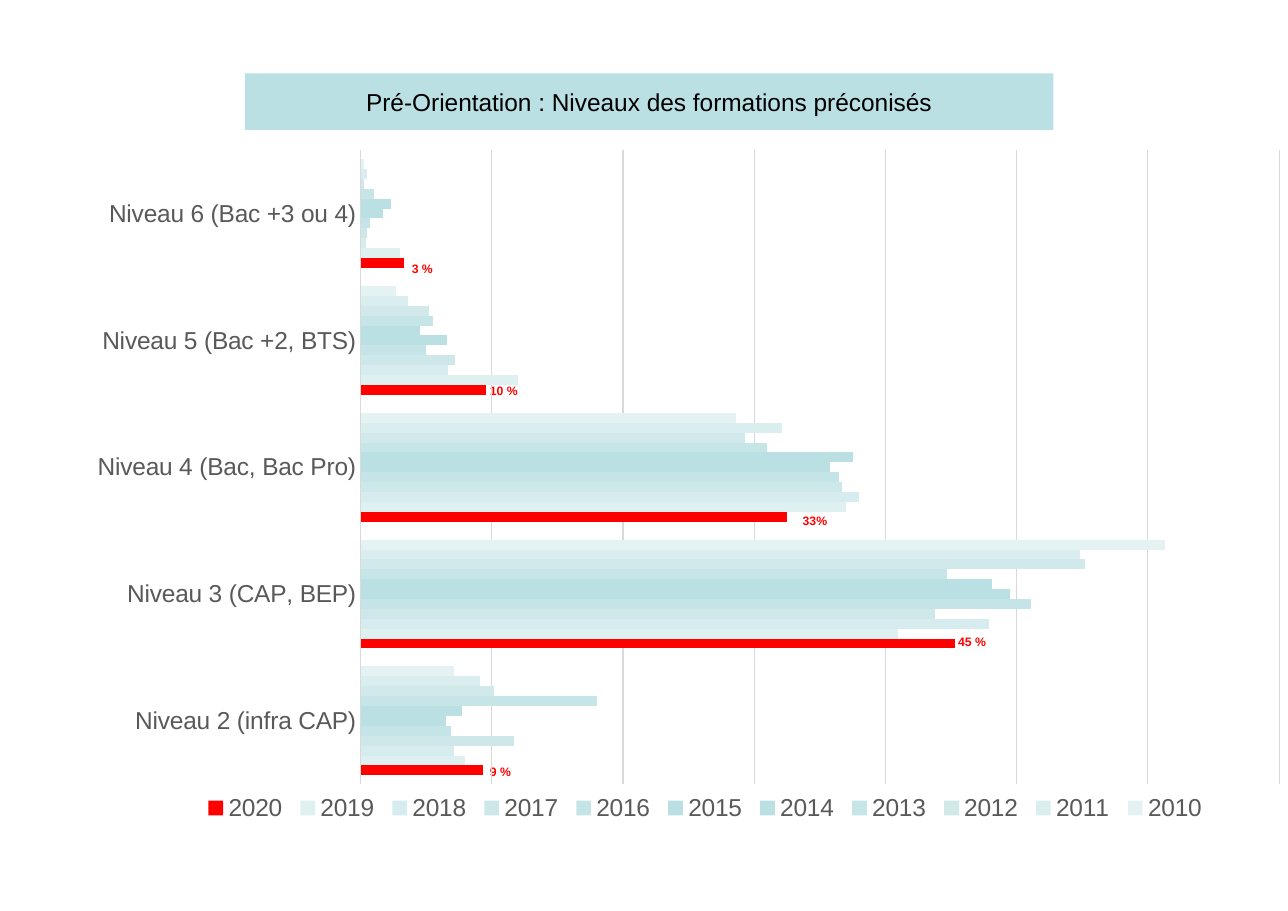
from lxml import etree
from pptx import Presentation
from pptx.chart import data as cd
from pptx.dml.color import RGBColor
from pptx.enum import chart as ch, shapes, text as tx
from pptx.util import Pt

BLACK = RGBColor(0, 0, 0)
RED = RGBColor(255, 0, 0)
GREY = RGBColor(0x59, 0x59, 0x59)
RULE = RGBColor(0xD9, 0xD9, 0xD9)
TEAL = RGBColor(0xBB, 0xE0, 0xE3)
FONT = "Arial"

TITLE = "Pré-Orientation : Niveaux des formations préconisés"
LEVELS = ["Niveau 6 (Bac +3 ou 4)", "Niveau 5 (Bac +2, BTS)", "Niveau 4 (Bac, Bac Pro)",
          "Niveau 3 (CAP, BEP)", "Niveau 2 (infra CAP)"]
YEARS = [
    ("2010", "E4F2F3", (0.003, 0.027, 0.286, 0.613, 0.071)),
    ("2011", "DBEEEF", (0.005, 0.036, 0.321, 0.548, 0.091)),
    ("2012", "D1E9EB", (0.003, 0.052, 0.293, 0.552, 0.102)),
    ("2013", "C6E5E7", (0.010, 0.055, 0.310, 0.447, 0.180)),
    ("2014", "BBE0E3", (0.023, 0.045, 0.375, 0.481, 0.077)),
    ("2015", "BBE0E3", (0.017, 0.066, 0.358, 0.495, 0.065)),
    ("2016", "C4E4E7", (0.007, 0.050, 0.365, 0.511, 0.069)),
    ("2017", "CEE8EA", (0.005, 0.072, 0.367, 0.438, 0.117)),
    ("2018", "D7ECEE", (0.004, 0.067, 0.380, 0.479, 0.071)),
    ("2019", "DFF0F1", (0.030, 0.120, 0.370, 0.410, 0.080)),
    ("2020", "FF0000", (0.033, 0.096, 0.325, 0.453, 0.093)),
]
NOTES = [
    ("3 %", 262, 167, 29),
    ("10 %", 313, 247, 33),
    ("33%", 517.5, 332, 31),
    ("45 %", 619, 411, 33),
    ("9 %", 313, 496, 29),
]


def style(font, size, color, bold=False):
    font.name, font.size, font.bold = FONT, Pt(size), bold
    font.color.rgb = color


def write(shape, words, size=8, color=RED, bold=True, align=tx.PP_ALIGN.LEFT,
          anchor=tx.MSO_ANCHOR.TOP, fit=tx.MSO_AUTO_SIZE.SHAPE_TO_FIT_TEXT):
    frame = shape.text_frame
    frame.word_wrap, frame.auto_size = False, fit
    frame.vertical_anchor = anchor
    line = frame.paragraphs[0]
    line.alignment = align
    run = line.add_run()
    run.text = words
    style(run.font, size, color, bold)


def place(node, index, inner=False, **box):
    for old in node.findall("{*}layout"):
        node.remove(old)
    space = etree.QName(node).namespace

    def add(host, tag, val=None):
        part = etree.SubElement(host, f"{{{space}}}{tag}")
        if val is not None:
            part.set("val", str(val))
        return part

    outer = etree.Element(f"{{{space}}}layout")
    layout = add(outer, "manualLayout")
    if inner:
        add(layout, "layoutTarget", "inner")
    add(layout, "xMode", "edge")
    add(layout, "yMode", "edge")
    for key, val in box.items():
        add(layout, key, val)
    node.insert(index, outer)


def draw_chart(slide):
    data = cd.CategoryChartData(number_format="0%")
    data.categories = LEVELS
    for year, tint, vals in YEARS:
        data.add_series(year, vals)
    chart = slide.shapes.add_chart(ch.XL_CHART_TYPE.BAR_CLUSTERED, Pt(13.7), Pt(95),
                                   Pt(828), Pt(453.6), data).chart
    chart.has_title = False
    style(chart.font, 16, BLACK)

    plot = chart.plots[0]
    plot.gap_width, plot.overlap, plot.vary_by_categories = 182, 0, False
    for bar, (year, tint, vals) in zip(plot.series, YEARS):
        bar.invert_if_negative = False
        bar.format.fill.solid()
        bar.format.fill.fore_color.rgb = RGBColor.from_string(tint)

    cats = chart.category_axis
    cats.reverse_order = True
    cats.major_tick_mark = cats.minor_tick_mark = ch.XL_TICK_MARK.NONE
    style(cats.tick_labels.font, 16, GREY)
    vals = chart.value_axis
    vals.minimum_scale, vals.maximum_scale, vals.major_unit = 0, 0.7, 0.1
    vals.has_major_gridlines = True
    vals.visible = False
    for line in (cats.format.line, vals.major_gridlines.format.line):
        line.color.rgb = RULE
        line.width = Pt(0.75)

    chart.has_legend = True
    legend = chart.legend
    legend.position = ch.XL_LEGEND_POSITION.BOTTOM
    legend.include_in_layout = False
    style(legend.font, 16, GREY)
    area = chart._chartSpace.find("{*}chart/{*}plotArea")
    place(area, 0, inner=True, x=0.268, y=0.007, w=0.725, h=0.914)
    place(legend._element, 1, x=0.14, y=0.93, w=0.8, h=0.05)


def main():
    deck = Presentation()
    deck.slide_width, deck.slide_height = Pt(841.68), Pt(595.44)
    slide = deck.slides.add_slide(deck.slide_layouts[6])

    band = slide.shapes.add_shape(shapes.MSO_SHAPE.RECTANGLE, Pt(160), Pt(48),
                                  Pt(528.5), Pt(37))
    band.shadow.inherit = False
    band.fill.solid()
    band.fill.fore_color.rgb = TEAL
    band.line.fill.background()
    write(band, TITLE, size=16, color=BLACK, bold=False, align=tx.PP_ALIGN.CENTER,
          anchor=tx.MSO_ANCHOR.MIDDLE, fit=tx.MSO_AUTO_SIZE.NONE)

    for words, left, top, width in NOTES:
        write(slide.shapes.add_textbox(Pt(left), Pt(top), Pt(width), Pt(17)), words)
    draw_chart(slide)
    deck.save("out.pptx")


if __name__ == "__main__":
    main()
